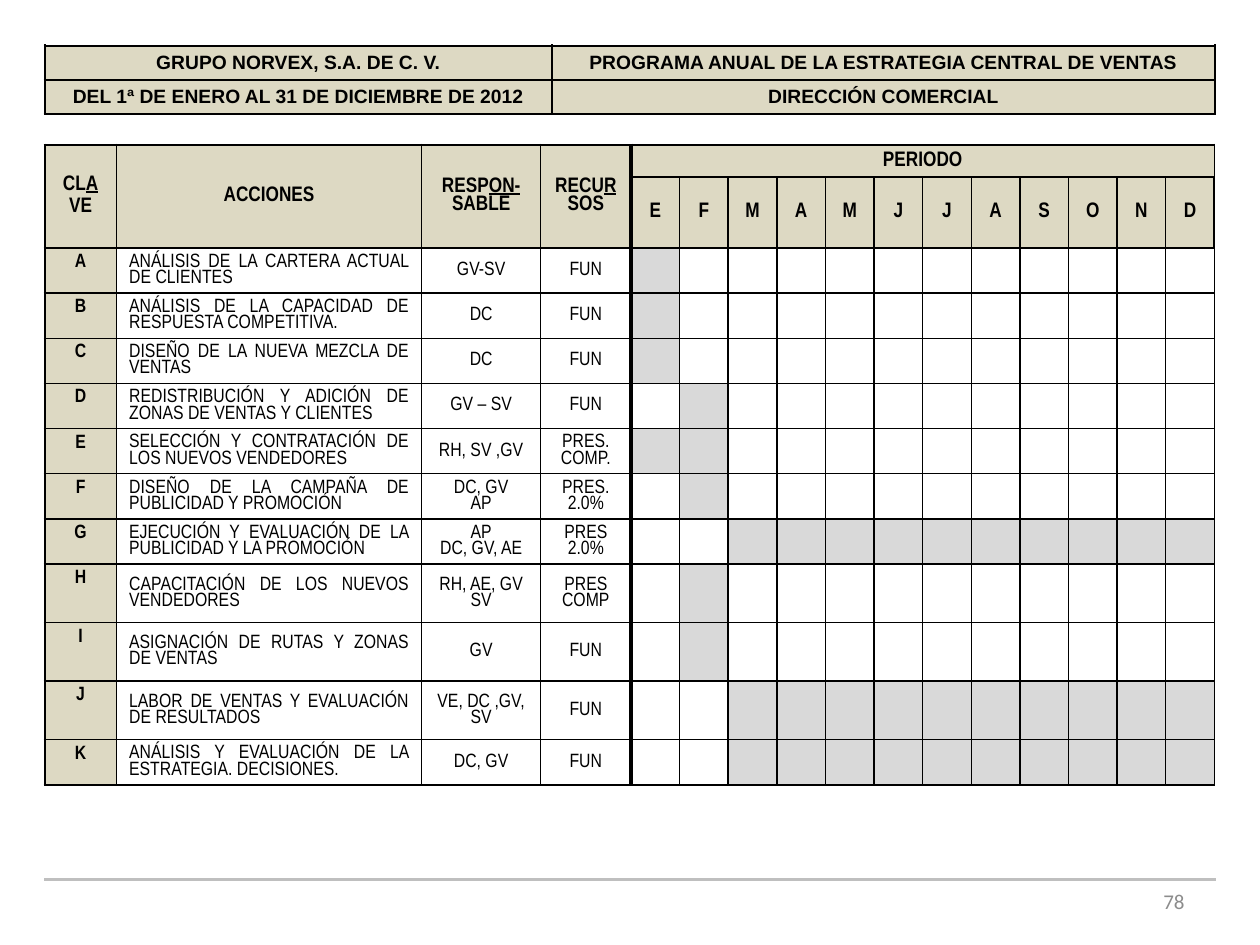
from dataclasses import dataclass

import pptx
import pptx.dml.color
import pptx.enum.shapes
import pptx.enum.text
import pptx.oxml.ns
import pptx.util
from lxml import etree

Cm, Pt = pptx.util.Cm, pptx.util.Pt
RGBColor = pptx.dml.color.RGBColor
PP_ALIGN = pptx.enum.text.PP_ALIGN
ANCHOR = pptx.enum.text.MSO_ANCHOR
qn = pptx.oxml.ns.qn

BLACK = RGBColor(0x00, 0x00, 0x00)
WHITE = RGBColor(0xFF, 0xFF, 0xFF)
BEIGE = RGBColor(0xDD, 0xD9, 0xC3)
SHADE = RGBColor(0xD9, 0xD9, 0xD9)
RULE = RGBColor(0xBF, 0xBF, 0xBF)
NUMBER = RGBColor(0x8C, 0x8C, 0x8C)

LEFT = 0.9
THIN, EDGE, THICK = 1, 1.5, 2.25
INFO_COLS = [1.45, 6.15, 2.4, 1.82]
MONTHS = "EFMAMJJASOND"
MONTH_W = 0.98


@dataclass
class Run:
    text: str
    underline: bool = False


@dataclass
class Style:
    size: float
    font: str = "Arial Narrow"
    bold: bool = False
    align: PP_ALIGN = PP_ALIGN.CENTER
    anchor: ANCHOR = ANCHOR.MIDDLE
    spacing: float = 0.9
    before: float = 0
    margin: float = 0.02  # top and bottom, in cm


@dataclass
class Action:
    text: str
    owner: list[str]
    resource: list[str]
    months: range
    height: float = 0.91


TITLE = Style(11, "Arial", True, spacing=1, margin=0.08)
HEAD = Style(12, bold=True, before=2.4, margin=0.08)
KEY = Style(11, bold=True, anchor=ANCHOR.TOP, margin=0.13)
BODY = Style(11)
JUSTIFIED = Style(11, align=PP_ALIGN.JUSTIFY)

TITLES = [
    ["GRUPO NORVEX, S.A. DE C. V.", "PROGRAMA ANUAL DE LA ESTRATEGIA CENTRAL DE VENTAS"],
    ["DEL 1ª DE ENERO AL 31 DE DICIEMBRE DE 2012", "DIRECCIÓN COMERCIAL"],
]
HEADS = [
    [[Run("CL"), Run("A", True)], [Run("VE")]],
    [[Run("ACCIONES")]],
    [[Run("RESP"), Run("ON-", True), Run("SABLE")]],
    [[Run("RECU"), Run("R", True), Run("SOS")]],
]
JAN, FEB, JAN_FEB, MAR_DEC = range(1), range(1, 2), range(2), range(2, 12)
ACTIONS = [
    Action("ANÁLISIS DE LA CARTERA ACTUAL DE CLIENTES", ["GV-SV"], ["FUN"], JAN),
    Action("ANÁLISIS DE LA CAPACIDAD DE RESPUESTA COMPETITIVA.", ["DC"], ["FUN"], JAN),
    Action("DISEÑO DE LA NUEVA MEZCLA DE VENTAS", ["DC"], ["FUN"], JAN),
    Action("REDISTRIBUCIÓN Y ADICIÓN DE ZONAS DE VENTAS Y CLIENTES", ["GV – SV"], ["FUN"], FEB),
    Action("SELECCIÓN Y CONTRATACIÓN DE LOS NUEVOS VENDEDORES",
           ["RH, SV ,GV"], ["PRES.", "COMP."], JAN_FEB),
    Action("DISEÑO DE LA CAMPAÑA DE PUBLICIDAD Y PROMOCIÓN",
           ["DC, GV", "AP"], ["PRES.", "2.0%"], FEB),
    Action("EJECUCIÓN Y EVALUACIÓN DE LA PUBLICIDAD Y LA PROMOCIÓN",
           ["AP", "DC, GV, AE"], ["PRES", "2.0%"], MAR_DEC),
    Action("CAPACITACIÓN DE LOS NUEVOS VENDEDORES",
           ["RH, AE, GV", "SV"], ["PRES", "COMP"], FEB, 1.18),
    Action("ASIGNACIÓN DE RUTAS Y ZONAS DE VENTAS", ["GV"], ["FUN"], FEB, 1.18),
    Action("LABOR DE VENTAS Y EVALUACIÓN DE RESULTADOS",
           ["VE, DC ,GV, SV"], ["FUN"], MAR_DEC, 1.18),
    Action("ANÁLISIS Y EVALUACIÓN DE LA ESTRATEGIA. DECISIONES.", ["DC, GV"], ["FUN"], MAR_DEC),
]


def lines(*texts: str) -> list[list[Run]]:
    return [[Run(t)] for t in texts]


def write(cell, paragraphs: list[list[Run]], style: Style) -> None:
    cell.vertical_anchor = style.anchor
    cell.margin_top = cell.margin_bottom = Cm(style.margin)
    tf = cell.text_frame
    for i, runs in enumerate(paragraphs):
        p = tf.add_paragraph() if i else tf.paragraphs[0]
        p.alignment = style.align
        p.line_spacing = style.spacing
        if i and style.before:
            p.space_before = Pt(style.before)
        for run in runs:
            r = p.add_run()
            r.text = run.text
            r.font.name, r.font.size = style.font, Pt(style.size)
            r.font.bold, r.font.underline = style.bold, run.underline
            r.font.color.rgb = BLACK


def set_empty(cell) -> None:
    """Keep the line of an empty cell small enough for its row."""
    cell.margin_top = cell.margin_bottom = Cm(BODY.margin)
    end = etree.SubElement(cell.text_frame.paragraphs[0]._p, qn("a:endParaRPr"), sz="1100")
    etree.SubElement(end, qn("a:latin"), typeface="Arial Narrow")


def set_borders(cell, left: float, right: float, top: float, bottom: float) -> None:
    tcPr = cell._tc.get_or_add_tcPr()
    for side, width in zip("LRTB", (left, right, top, bottom)):
        ln = etree.SubElement(tcPr, qn(f"a:ln{side}"), w=str(int(Pt(width))))
        fill = etree.SubElement(ln, qn("a:solidFill"))
        etree.SubElement(fill, qn("a:srgbClr"), val=str(BLACK))


def set_fill(cell, color: RGBColor) -> None:
    cell.fill.solid()
    cell.fill.fore_color.rgb = color


def new_table(s, top: float, cols: list[float], rows: list[float]):
    tb = s.shapes.add_table(len(rows), len(cols), Cm(LEFT), Cm(top),
                            Cm(sum(cols)), Cm(sum(rows))).table
    tb.first_row = tb.horz_banding = False
    for col, width in zip(tb.columns, cols):
        col.width = Cm(width)
    for row, height in zip(tb.rows, rows):
        row.height = Cm(height)
    return tb


def draw_titles(s) -> None:
    tb = new_table(s, 0.92, [10.23, 13.36], [0.69, 0.69])
    for i, row in enumerate(TITLES):
        for j, text in enumerate(row):
            cell = tb.cell(i, j)
            set_borders(cell, THIN if j else EDGE, EDGE if j else THIN,
                        THIN if i else EDGE, EDGE if i else THIN)
            set_fill(cell, BEIGE)
            write(cell, lines(text), TITLE)


def draw_program(s) -> None:
    n = len(INFO_COLS)
    tb = new_table(s, 2.92, INFO_COLS + [MONTH_W] * len(MONTHS),
                   [0.65, 1.43] + [a.height for a in ACTIONS])
    last_row, last_col = len(tb.rows) - 1, len(tb.columns) - 1

    # Borders and fills
    for i in range(last_row + 1):
        for j in range(last_col + 1):
            cell = tb.cell(i, j)
            set_borders(cell,
                        {0: EDGE, n: THICK}.get(j, THIN),
                        THICK if j == n - 1 else EDGE if j == last_col and i < 2 else THIN,
                        EDGE if i == 0 else THIN,
                        EDGE if i == last_row and j < n else THIN)
            if i < 2 or j == 0:
                set_fill(cell, BEIGE)
            elif j < n:
                cell.fill.background()
            else:
                set_fill(cell, SHADE if j - n in ACTIONS[i - 2].months else WHITE)
                set_empty(cell)

    # Headings
    for j, head in enumerate(HEADS):
        tb.cell(0, j).merge(tb.cell(1, j))
        write(tb.cell(0, j), head, HEAD)
    tb.cell(0, n).merge(tb.cell(0, last_col))
    write(tb.cell(0, n), lines("PERIODO"), HEAD)
    for j, month in enumerate(MONTHS, n):
        write(tb.cell(1, j), lines(month), HEAD)

    # Actions
    for i, (key, action) in enumerate(zip("ABCDEFGHIJK", ACTIONS), 2):
        write(tb.cell(i, 0), lines(key), KEY)
        write(tb.cell(i, 1), lines(action.text), JUSTIFIED)
        write(tb.cell(i, 2), lines(*action.owner), BODY)
        write(tb.cell(i, 3), lines(*action.resource), BODY)


def draw_footer(s) -> None:
    sp = s.shapes.add_connector(pptx.enum.shapes.MSO_CONNECTOR.STRAIGHT,
                                Cm(0.89), Cm(17.73), Cm(24.51), Cm(17.73))
    sp.line.color.rgb, sp.line.width = RULE, Pt(2)
    etree.SubElement(sp._element.spPr, qn("a:effectLst"))

    tf = s.shapes.add_textbox(Cm(18.21), Cm(17.65), Cm(5.92), Cm(1.02)).text_frame
    tf.word_wrap, tf.vertical_anchor = True, ANCHOR.MIDDLE
    p = tf.paragraphs[0]
    p.alignment = PP_ALIGN.RIGHT
    r = p.add_run()
    r.text = "78"
    r.font.name, r.font.size, r.font.color.rgb = "Calibri", Pt(12), NUMBER


def main() -> None:
    prs = pptx.Presentation()
    prs.slide_width, prs.slide_height = Cm(25.4), Cm(19.05)
    s = prs.slides.add_slide(prs.slide_layouts[6])
    draw_footer(s)
    draw_titles(s)
    draw_program(s)
    prs.save("out.pptx")


if __name__ == "__main__":
    main()
